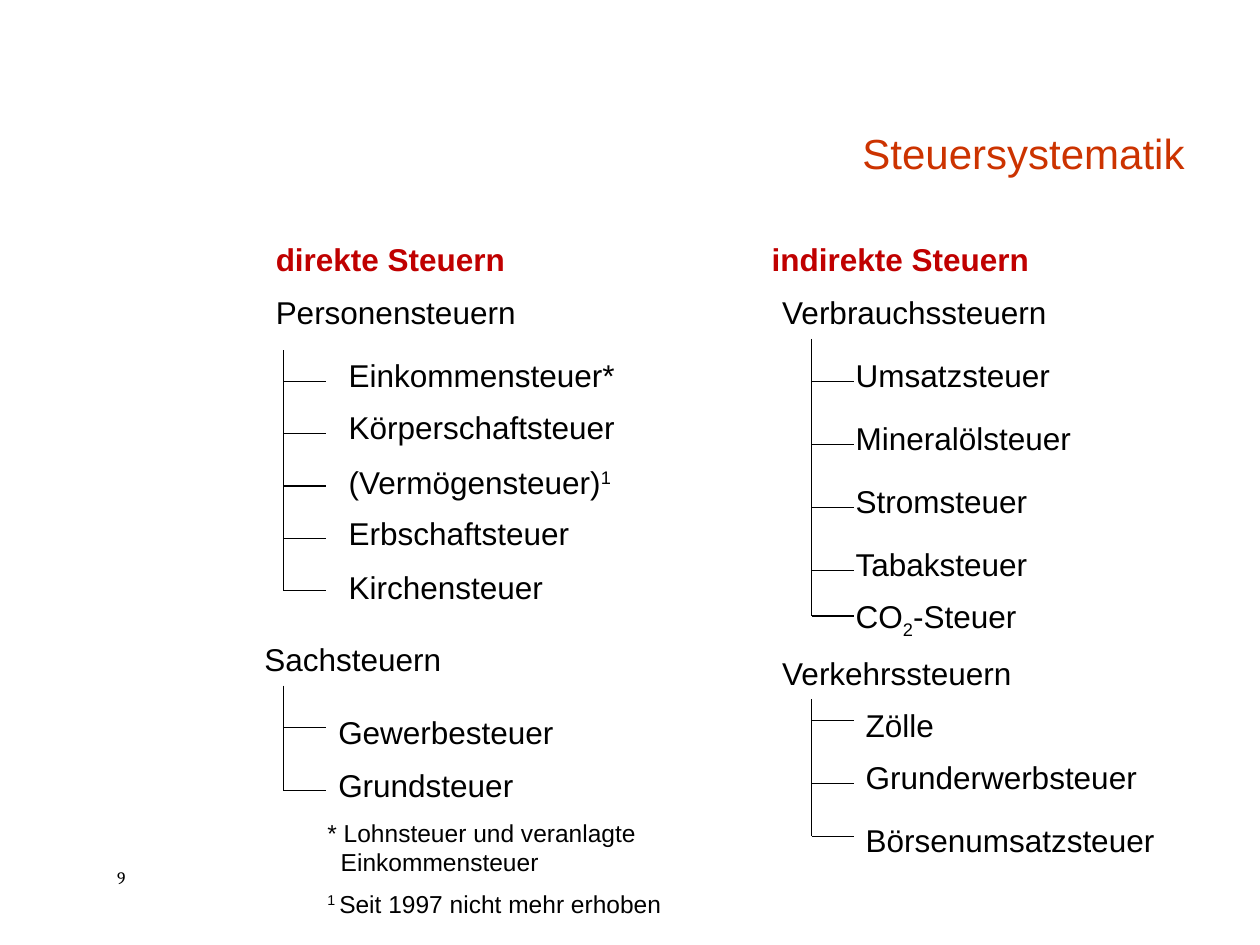
from dataclasses import dataclass

from lxml import etree
from pptx import Presentation, util as u
from pptx.dml.color import RGBColor
from pptx.enum import shapes, text
from pptx.oxml import ns


@dataclass(frozen=True)
class Theme:
    """Colours, fonts and type sizes of the slide."""
    ink: str = "000000"
    title: str = "CC3300"
    heading: str = "C00000"
    sans: str = "Arial"
    serif: str = "Cambria"
    title_size: int = 24
    body_size: int = 18
    note_size: int = 14
    number_size: int = 10
    line_width: float = 0.75


THEME = Theme()
ROW_HEIGHT = 1.02
TICK_LENGTH = 0.85
SUPERSCRIPT, SUBSCRIPT = 30000, -25000


def style(paragraph, size=THEME.body_size, color=THEME.ink, face=THEME.sans, bold=False):
    """Set the font of a whole paragraph."""
    font = paragraph.font
    font.size, font.name, font.bold = u.Pt(size), face, bold
    font.color.rgb = RGBColor.from_string(color)


def add_runs(paragraph, parts):
    """Fill a paragraph from plain strings and (string, baseline) pairs."""
    for part in parts:
        wording, baseline = (part, 0) if isinstance(part, str) else part
        run = paragraph.add_run()
        run.text = wording
        if baseline:
            run.font._element.set("baseline", str(baseline))


def add_text(slide, left, top, width, parts, height=ROW_HEIGHT, align=text.PP_ALIGN.LEFT, **font):
    """Add a wrapped text box with one styled paragraph and return its frame."""
    frame = slide.shapes.add_textbox(u.Cm(left), u.Cm(top), u.Cm(width), u.Cm(height)).text_frame
    frame.word_wrap = True
    frame.auto_size = text.MSO_AUTO_SIZE.SHAPE_TO_FIT_TEXT
    paragraph = frame.paragraphs[0]
    paragraph.alignment = align
    add_runs(paragraph, parts)
    style(paragraph, **font)
    return frame


def add_line(slide, x1, y1, x2, y2):
    """Draw a thin straight line without a shadow."""
    line = slide.shapes.add_connector(
        shapes.MSO_CONNECTOR.STRAIGHT, u.Cm(x1), u.Cm(y1), u.Cm(x2), u.Cm(y2))
    line.line.color.rgb = RGBColor.from_string(THEME.ink)
    line.line.width = u.Pt(THEME.line_width)
    etree.SubElement(line._element.spPr, ns.qn("a:effectLst"))


def add_branch(slide, group, trunk, trunk_top, label_left, taxes):
    """Draw a tax group: its name, the trunk, and a tick and label per tax."""
    group_name, group_left, group_top = group
    add_text(slide, group_left, group_top, 7.2, [group_name])
    add_line(slide, trunk, trunk_top, trunk, taxes[-1][0])
    for tick, label_top, *parts in taxes:
        add_line(slide, trunk, tick, trunk + TICK_LENGTH, tick)
        add_text(slide, label_left, label_top, 6.7, parts)


def add_title(slide):
    """Add the right-aligned title, standing on the bottom of its box."""
    frame = add_text(slide, 5.31, 1.06, 18.82, ["Steuersystematik"], height=2.67,
                     align=text.PP_ALIGN.RIGHT, size=THEME.title_size, color=THEME.title)
    frame.auto_size = text.MSO_AUTO_SIZE.NONE
    frame.vertical_anchor = text.MSO_ANCHOR.BOTTOM
    frame.paragraphs[0].line_spacing = 0.9


def add_footnotes(slide):
    """Add the two footnotes, the first with a hanging second line."""
    frame = add_text(slide, 6.35, 16.36, 8.05, ["* Lohnsteuer und veranlagte"],
                     height=2.36, size=THEME.note_size)
    first = frame.paragraphs[0]
    first.add_line_break()
    add_runs(first, ["Einkommensteuer"])
    hanging = first._p.get_or_add_pPr()
    hanging.set("marL", str(u.Cm(0.27)))
    hanging.set("indent", str(-u.Cm(0.27)))
    second = frame.add_paragraph()
    second.space_before = u.Pt(THEME.note_size / 2)
    add_runs(second, [("1 ", SUPERSCRIPT), "Seit 1997 nicht mehr erhoben"])
    style(second, size=THEME.note_size)


def main():
    """Build the slide and save it."""
    deck = Presentation()
    deck.slide_width, deck.slide_height = u.Cm(25.4), u.Cm(19.05)
    slide = deck.slides.add_slide(deck.slide_layouts[6])

    add_title(slide)
    heading = {"color": THEME.heading, "bold": True}
    add_text(slide, 5.31, 4.72, 8.46, ["direkte Steuern"], **heading)
    add_text(slide, 15.29, 4.72, 5.72, ["indirekte Steuern"],
             align=text.PP_ALIGN.CENTER, **heading)

    direct, indirect = 5.72, 16.36
    add_branch(slide, ("Personensteuern", 5.31, 5.79), direct, 7.06, 6.78, [
        (7.69, 7.06, "Einkommensteuer*"),
        (8.74, 8.1, "Körperschaftsteuer"),
        (9.8, 9.2, "(Vermögensteuer)", ("1", SUPERSCRIPT)),
        (10.86, 10.23, "Erbschaftsteuer"),
        (11.91, 11.33, "Kirchensteuer"),
    ])
    add_branch(slide, ("Sachsteuern", 5.08, 12.77), direct, 13.82, 6.57, [
        (14.67, 14.25, "Gewerbesteuer"),
        (15.94, 15.31, "Grundsteuer"),
    ])
    add_branch(slide, ("Verbrauchssteuern", 15.52, 5.79), indirect, 6.83, 17, [
        (7.69, 7.06, "Umsatzsteuer"),
        (8.96, 8.33, "Mineralölsteuer"),
        (10.23, 9.6, "Stromsteuer"),
        (11.5, 10.87, "Tabaksteuer"),
        (12.42, 11.91, "CO", ("2", SUBSCRIPT), "-Steuer"),
    ])
    add_branch(slide, ("Verkehrssteuern", 15.52, 13.05), indirect, 14.1, 17.2, [
        (14.53, 14.1, "Zölle"),
        (15.8, 15.16, "Grunderwerbsteuer"),
        (16.86, 16.43, "Börsenumsatzsteuer"),
    ])

    add_footnotes(slide)
    add_text(slide, 2.11, 17.35, 1.7, ["9"], height=0.69,
             size=THEME.number_size, face=THEME.serif)
    deck.save("out.pptx")


if __name__ == "__main__":
    main()
